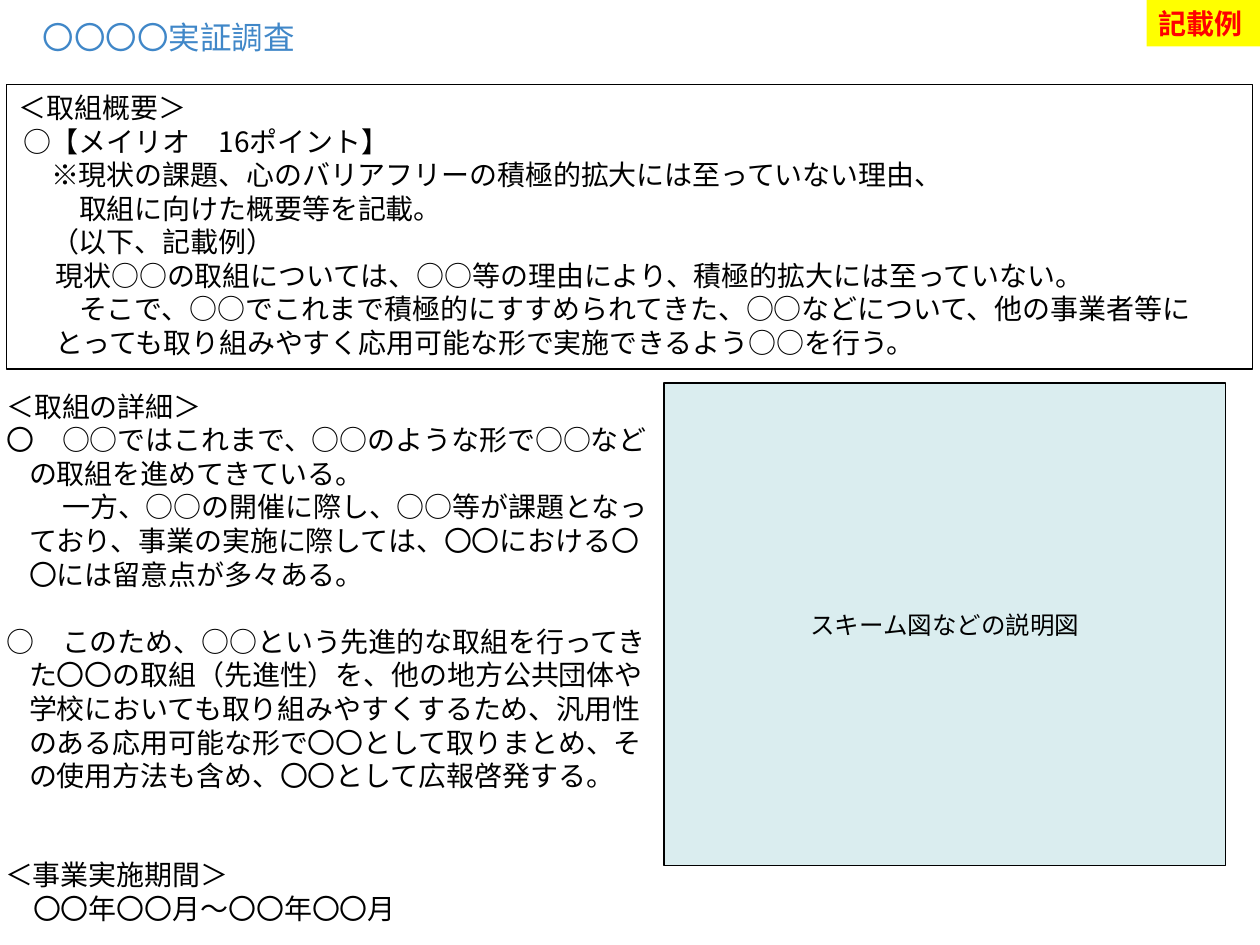
from pptx import Presentation
from pptx.dml.color import RGBColor
from pptx.enum.shapes import MSO_SHAPE as SHAPE
from pptx.enum.text import MSO_ANCHOR as ANCHOR, PP_ALIGN as ALIGN
from pptx.oxml.ns import qn
from pptx.util import Pt
from lxml.etree import SubElement

JP, LATIN = "Noto Sans CJK JP", "Arial"
LINE = 19.2
HANG = (13, -13)
ITEM = (21, -18.5)

TITLE = [("〇〇〇〇実証調査", 18, 0)]
OVERVIEW = [
    ("＜取組概要＞", *HANG),
    ("○【メイリオ\u300016ポイント】".replace("\u3000", "　"), *ITEM),
    ("※現状の課題、心のバリアフリーの積極的拡大には至っていない理由、", 21, -2.5),
    ("取組に向けた概要等を記載。", 21, 13.5),
    ("（以下、記載例）\v現状○○の取組については、○○等の理由により、積極的拡大には至っていない。", 21, -2.5),
    ("そこで、○○でこれまで積極的にすすめられてきた、○○などについて、他の事業者等に"
     "とっても取り組みやすく応用可能な形で実施できるよう○○を行う。", 21, 13.5),
]
DETAILS = [
    ("＜取組の詳細＞", *HANG),
    ("〇　○○ではこれまで、○○のような形で○○などの取組を進めてきている。", *HANG),
    ("一方、○○の開催に際し、○○等が課題となっており、事業の実施に際しては、"
     "〇〇における〇〇には留意点が多々ある。", 13, 19),
    ("○　このため、○○という先進的な取組を行ってきた〇〇の取組（先進性）を、"
     "他の地方公共団体や学校においても取り組みやすくするため、汎用性のある応用可能な形で"
     "〇〇として取りまとめ、その使用方法も含め、〇〇として広報啓発する。", *HANG, LINE),
]
PERIOD = [("＜事業実施期間＞", *HANG), ("〇〇年〇〇月～〇〇年〇〇月", 13, 3)]

TIGHT = dict.fromkeys(("margin_left", "margin_right", "margin_top", "margin_bottom"), Pt(3.6))
MIDDLE = {"vertical_anchor": ANCHOR.MIDDLE}
BODY = {"size": Pt(16), "name": JP}
BOXES = [
    ((-0.7, 1.4, 700.6, 38.9), TITLE, {**BODY, "size": Pt(18)}, "4087C8", MIDDLE, {}),
    ((0, 218.9, 379.4, 239.8), DETAILS, BODY, "000000", TIGHT, {}),
    ((3.6, 48.2, 712.1, 162.7), OVERVIEW, BODY, "000000", {}, {"line": "000000"}),
    ((379.4, 218.9, 321.1, 275.8), [("スキーム図などの説明図", 0, 0)],
     {"size": Pt(14), "name": LATIN}, "000000", MIDDLE,
     {"fill": "DAEDEF", "line": "000000", "align": ALIGN.CENTER}),
    ((-0.7, 486.7, 368.6, 46.1), PERIOD, BODY, "000000", TIGHT, {}),
    ((655.2, 0, 64.8, 26.6), [("記載例", 0, 0)],
     {"size": Pt(16), "name": LATIN, "bold": True}, "FF0000", {}, {"fill": "FFFF00"}),
]


def rgb(value):
    """Return the colour for a hex string."""
    return RGBColor.from_string(value)


def apply(target, values):
    """Set each named attribute on the target."""
    for name, value in values.items():
        setattr(target, name, value)


def add_frame(s, box, fill=None, line=None):
    """Add a plain text box, or a rectangle when it has fill or line."""
    place = [Pt(v) for v in box]
    if not (fill or line):
        return s.shapes.add_textbox(*place)
    sp = s.shapes.add_shape(SHAPE.RECTANGLE, *place)
    sp.shadow.inherit = False
    for part, value in ((sp.fill, fill), (sp.line.fill, line)):
        if value:
            part.solid()
            part.fore_color.rgb = rgb(value)
        else:
            part.background()
    if line:
        sp.line.width = Pt(0.75)
    return sp


def add_paragraph(p, font, color, align, text, left, indent, before=0):
    """Write one paragraph with its indents and font."""
    p.text = text
    apply(p, {"alignment": align, "space_before": Pt(before)})
    pPr = p._p.get_or_add_pPr()
    pPr.set("marL", str(Pt(left)))
    pPr.set("indent", str(Pt(indent)))
    for r in p.runs:
        apply(r.font, font)
        r.font.color.rgb = rgb(color)
        SubElement(r.font._element, qn("a:ea")).set("typeface", JP)


def add_box(s, box, lines, font, color, frame, style):
    """Add a box and fill it with its paragraphs."""
    look = dict(style)
    align = look.pop("align", ALIGN.LEFT)
    tf = add_frame(s, box, **look).text_frame
    apply(tf, {"word_wrap": True, "vertical_anchor": ANCHOR.TOP, **frame})
    for i, line in enumerate(lines):
        p = tf.add_paragraph() if i else tf.paragraphs[0]
        add_paragraph(p, font, color, align, *line)


def main():
    """Build and save the slide."""
    prs = Presentation()
    apply(prs, {"slide_width": Pt(720), "slide_height": Pt(540)})
    s = prs.slides.add_slide(prs.slide_layouts[6])
    for item in BOXES:
        add_box(s, *item)
    prs.save("out.pptx")


if __name__ == "__main__":
    main()
